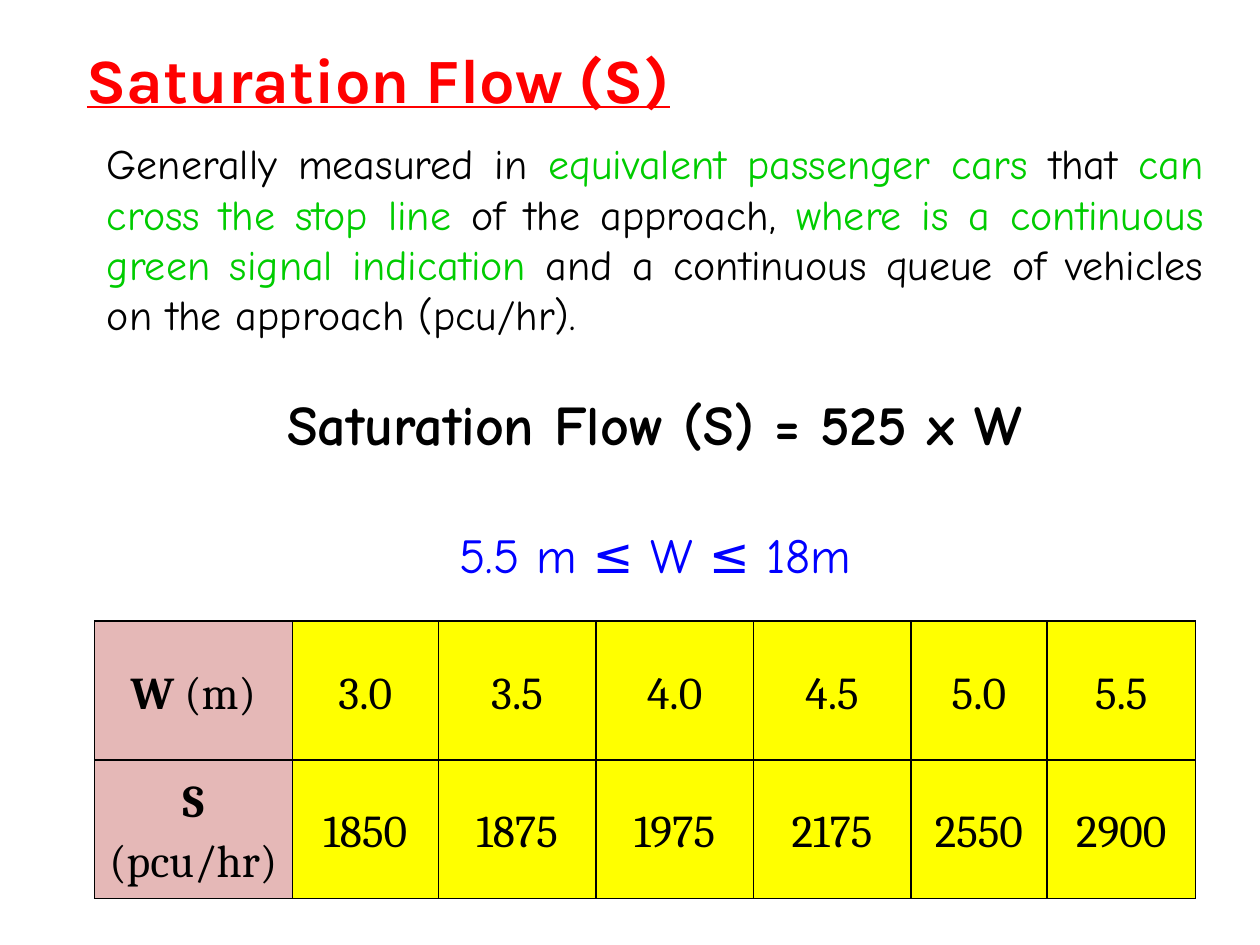
from lxml import etree
from pptx import Presentation
from pptx.dml.color import RGBColor
from pptx.enum import text as t
from pptx.oxml import ns
from pptx.util import Inches, Pt

COLORS = {"title": "FF0000", "ink": "000000", "key": "00CC00", "range": "0000FF",
          "head": "E5B8B7", "value": "FFFF00"}
BODY_FONT, TABLE_FONT = "Comic Neue", "Cambria"
WIDTHS = [1.57, 1.16, 1.25, 1.25, 1.25, 1.08, 1.18]
ROWS = [
    (("W", " (m)"), ["3.0", "3.5", "4.0", "4.5", "5.0", "5.5"]),
    (("S ", "(pcu/hr)"), ["1850", "1875", "1975", "2175", "2550", "2900"]),
]
DEFINITION = [
    ("Generally measured in ", "ink"),
    ("equivalent passenger cars ", "key"),
    ("that ", "ink"),
    ("can cross the stop line ", "key"),
    ("of the approach, ", "ink"),
    ("where is a continuous green signal indication ", "key"),
    ("and a continuous queue of vehicles on the approach (pcu/hr).", "ink"),
]


def add_run(paragraph, words, size, font, color="ink", bold=False, underline=False):
    """Append formatted words to a paragraph."""
    run = paragraph.add_run()
    run.text = words
    run.font.size = Pt(size)
    run.font.name = font
    run.font.bold = bold
    run.font.underline = underline
    run.font.color.rgb = RGBColor.from_string(COLORS[color])


def add_frame(slide, box, anchor):
    """Add a wrapping text box and return its text frame."""
    frame = slide.shapes.add_textbox(*map(Inches, box)).text_frame
    frame.word_wrap = True
    frame.vertical_anchor = anchor
    return frame


def add_title(slide, box):
    """Place the underlined heading."""
    heading = add_frame(slide, box, t.MSO_ANCHOR.TOP).paragraphs[0]
    heading.line_spacing = 1.5
    add_run(heading, "Saturation Flow (S)", 36, "Karla", "title", bold=True, underline=True)


def add_explanation(slide, box):
    """Place the definition, the formula and its valid range."""
    frame = add_frame(slide, box, t.MSO_ANCHOR.MIDDLE)
    frame.margin_bottom = Inches(0.45)
    definition = frame.paragraphs[0]
    definition.alignment = t.PP_ALIGN.JUSTIFY
    for words, color in DEFINITION:
        add_run(definition, words, 24, BODY_FONT, color)
    for words, size, color, bold, gap in [
        ("Saturation Flow (S) = 525 x W", 32, "ink", True, 28.8),
        ("5.5 m ≤ W ≤ 18m", 28, "range", False, 38.4),
    ]:
        line = frame.add_paragraph()
        line.alignment = t.PP_ALIGN.CENTER
        line.space_before = Pt(gap)
        add_run(line, words, size, BODY_FONT, color, bold)


def add_borders(cell):
    """Draw a thin line on all four sides of a cell."""
    properties = cell._tc.get_or_add_tcPr()
    for index, side in enumerate(("lnL", "lnR", "lnT", "lnB")):
        border = etree.Element(ns.qn(f"a:{side}"), w=str(Pt(1)))
        fill = etree.SubElement(border, ns.qn("a:solidFill"))
        etree.SubElement(fill, ns.qn("a:srgbClr"), val=COLORS["ink"])
        properties.insert(index, border)


def fill_cell(cell, parts, color):
    """Format a cell and write its (words, bold) parts."""
    cell.fill.solid()
    cell.fill.fore_color.rgb = RGBColor.from_string(COLORS[color])
    cell.vertical_anchor = t.MSO_ANCHOR.MIDDLE
    cell.margin_left = cell.margin_right = Inches(0.07)
    cell.margin_top = cell.margin_bottom = 0
    line = cell.text_frame.paragraphs[0]
    line.alignment = t.PP_ALIGN.CENTER
    line.line_spacing = 1.15
    for words, bold in parts:
        add_run(line, words, 26, TABLE_FONT, bold=bold)
    add_borders(cell)


def add_flow_table(slide, box):
    """Place the table of saturation flow by approach width."""
    table = slide.shapes.add_table(len(ROWS), len(WIDTHS), *map(Inches, box)).table
    table.first_row = table.horz_banding = False
    for column, width in zip(table.columns, WIDTHS):
        column.width = Inches(width)
    for row, ((symbol, unit), values) in enumerate(ROWS):
        fill_cell(table.cell(row, 0), [(symbol, True), (unit, False)], "head")
        for column, value in enumerate(values, 1):
            fill_cell(table.cell(row, column), [(value, False)], "value")


def main():
    """Build and save the slide."""
    deck = Presentation()
    deck.slide_width, deck.slide_height = Inches(10), Inches(7.5)
    slide = deck.slides.add_slide(deck.slide_layouts[6])
    add_title(slide, (0.59, -0.03, 5.35, 1.01))
    add_explanation(slide, (0.75, 0.99, 8.9, 4.14))
    add_flow_table(slide, (0.75, 4.93, 8.74, 2.2))
    deck.save("out.pptx")


if __name__ == "__main__":
    main()
